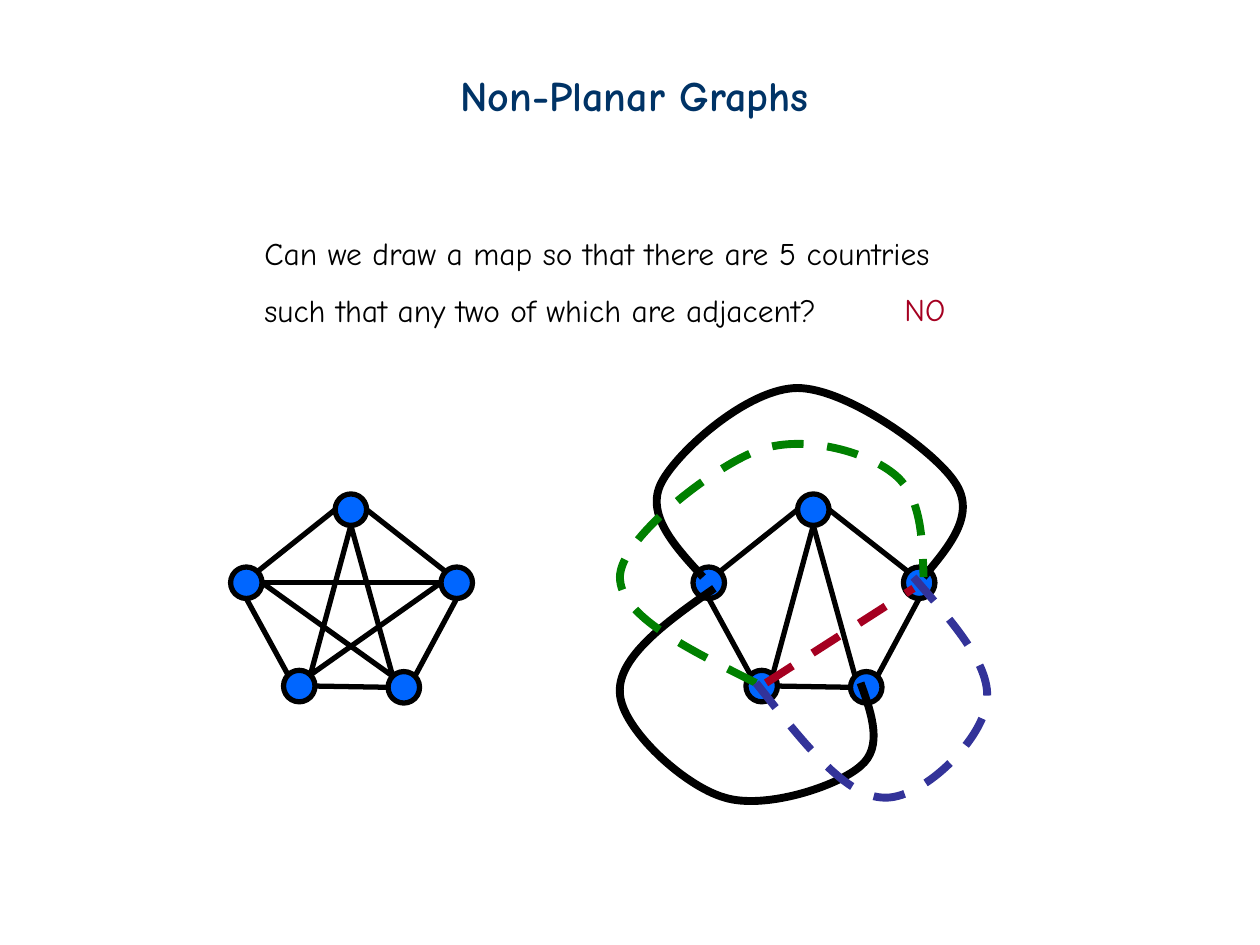
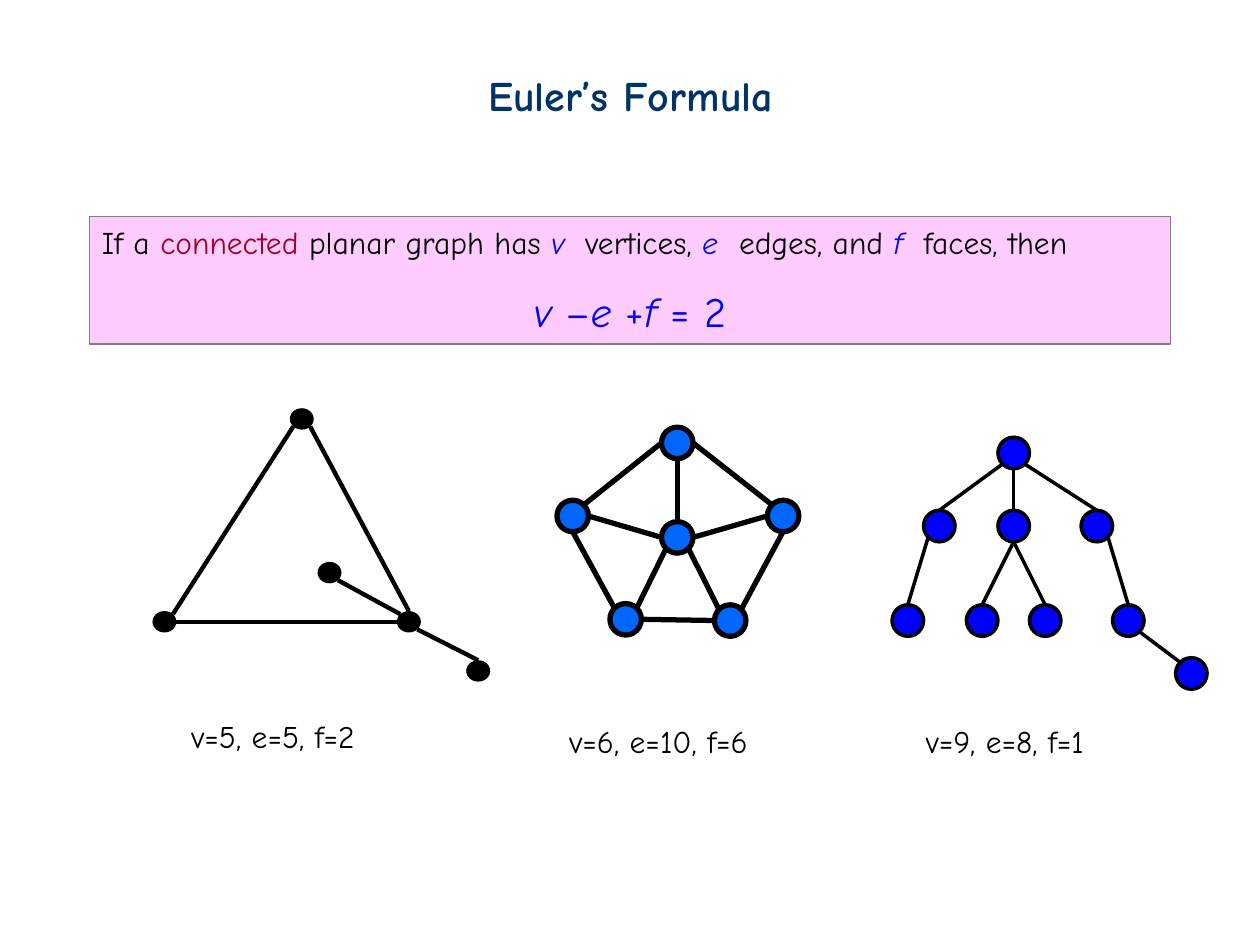
import math

import lxml.etree
import pptx
import pptx.dml.color
import pptx.enum.dml
import pptx.enum.shapes
import pptx.enum.text
import pptx.oxml.ns
import pptx.util

Inches = pptx.util.Inches
Pt = pptx.util.Pt
RGBColor = pptx.dml.color.RGBColor
qn = pptx.oxml.ns.qn
ALIGN = pptx.enum.text.PP_ALIGN
SHAPE = pptx.enum.shapes.MSO_SHAPE

FONT = "Comic Neue"
NAVY = RGBColor(0x00, 0x33, 0x66)
BLACK = RGBColor(0x00, 0x00, 0x00)
GREY = RGBColor(0x80, 0x80, 0x80)
PINK = RGBColor(0xFF, 0xCC, 0xFF)
CRIMSON = RGBColor(0xA5, 0x00, 0x21)
GREEN = RGBColor(0x00, 0x80, 0x00)
INDIGO = RGBColor(0x33, 0x33, 0x99)
AZURE = RGBColor(0x00, 0x66, 0xFF)
BLUE = RGBColor(0x00, 0x00, 0xFF)

DIAGONAL = math.sqrt(0.5)
COMPASS = {
    "N": (0, -1), "E": (1, 0), "S": (0, 1), "W": (-1, 0),
    "NE": (DIAGONAL, -DIAGONAL), "SE": (DIAGONAL, DIAGONAL),
    "SW": (-DIAGONAL, DIAGONAL), "NW": (-DIAGONAL, -DIAGONAL),
}

NON_PLANAR_TITLE = ("Non-Planar Graphs", 3.41, 3.25)
QUESTION = [
    (ALIGN.LEFT, 1, 18, [("Can we draw a map so that there are 5 countries", BLACK, False)]),
    (ALIGN.LEFT, 1.5, 18, [("such that any two of which are adjacent?", BLACK, False)]),
]
ANSWER = [(ALIGN.LEFT, 1, 18, [("NO", CRIMSON, False)])]

EULER_TITLE = ("Euler’s Formula", 3.68, 2.65)
THEOREM = [
    (ALIGN.LEFT, 1, 18, [
        ("If a ", BLACK, False), ("connected", CRIMSON, False),
        (" planar graph has ", BLACK, False), ("v  ", BLUE, True),
        ("vertices, ", BLACK, False), ("e  ", BLUE, True),
        ("edges, and ", BLACK, False), ("f  ", BLUE, True),
        ("faces, then", BLACK, False)]),
    (ALIGN.CENTER, 1.5, 24, [
        ("v ", BLUE, True), ("–", BLUE, False), ("e ", BLUE, True),
        ("+", BLUE, False), ("f", BLUE, True), (" = 2", BLUE, False)]),
]
COUNTS = [
    ("v=5, e=5, f=2", 1.42, 5.64, 1.71),
    ("v=6, e=10, f=6", 4.42, 5.68, 1.83),
    ("v=9, e=8, f=1", 7.25, 5.68, 1.67),
]

PENTAGON = {"top": (0.83, 0), "left": (0, 0.58), "right": (1.67, 0.58),
            "foot_left": (0.42, 1.4), "foot_right": (1.25, 1.41)}
RIM = [
    ("foot_left", "E", "foot_right", "W"), ("top", "E", "right", "NW"),
    ("right", "S", "foot_right", "NE"), ("top", "W", "left", "NE"),
    ("left", "S", "foot_left", "NW"),
]
SPIKES = [("top", "S", "foot_right", "NW"), ("top", "S", "foot_left", "NE")]
CROSSINGS = [
    ("left", "E", "right", "W"), ("foot_right", "NW", "left", "E"),
    ("foot_left", "NE", "right", "W"),
]
HUB = {"hub": (0.83, 0.75)}
SPOKES = [
    ("top", "S", "hub", "N"), ("hub", "E", "right", "W"),
    ("hub", "SE", "foot_right", "NW"), ("hub", "SW", "foot_left", "NE"),
    ("hub", "W", "left", "E"),
]
TRIANGLE = {"top": (2.3, 3.24), "inner": (2.52, 4.46), "left": (1.21, 4.85),
            "right": (3.15, 4.85), "tail": (3.7, 5.24)}
TRIANGLE_EDGES = [
    ("left", "NE", "top", "SW"), ("right", "N", "top", "SE"),
    ("tail", "N", "right", "SE"), ("right", "NW", "inner", "SE"),
    ("left", "E", "right", "W"),
]
TREE = {
    "root": (7.92, 3.47), "left": (7.33, 4.05), "middle": (7.92, 4.05),
    "right": (8.58, 4.05), "left_leaf": (7.08, 4.8), "middle_leaf_1": (7.67, 4.8),
    "middle_leaf_2": (8.17, 4.8), "right_child": (8.83, 4.8), "last_leaf": (9.33, 5.22),
}
TREE_EDGES = [
    ("root", "S", "middle", "N"), ("root", "SW", "left", "N"),
    ("root", "SE", "right", "N"), ("middle", "S", "middle_leaf_1", "N"),
    ("middle", "S", "middle_leaf_2", "N"), ("left", "SW", "left_leaf", "N"),
    ("right", "SE", "right_child", "N"), ("right_child", "SE", "last_leaf", "NW"),
]

DETOURS = [
    (BLACK, False, [
        (5.58, 4.58), (5.35, 4.33), (5.12, 4.08), (5.25, 3.83), (5.38, 3.58),
        (5.94, 3.08), (6.33, 3.08), (6.72, 3.08), (7.42, 3.58), (7.58, 3.83),
        (7.75, 4.08), (7.54, 4.33), (7.33, 4.58)]),
    (BLACK, False, [
        (5.67, 4.67), (5.28, 4.94), (4.9, 5.22), (4.92, 5.5), (4.93, 5.78),
        (5.43, 6.24), (5.75, 6.33), (6.07, 6.43), (6.65, 6.24), (6.83, 6.08),
        (7.01, 5.93), (6.92, 5.67), (6.83, 5.42)]),
    (CRIMSON, True, [(6.08, 5.42), (7.25, 4.67)]),
    (GREEN, True, [
        (6, 5.42), (5.46, 5.15), (4.92, 4.89), (4.92, 4.58), (4.92, 4.28),
        (5.64, 3.72), (6, 3.58), (6.36, 3.44), (6.86, 3.58), (7.08, 3.75),
        (7.31, 3.92), (7.32, 4.25), (7.33, 4.58)]),
    (INDIGO, True, [
        (6, 5.42), (6.35, 5.86), (6.69, 6.31), (7, 6.33), (7.31, 6.36),
        (7.79, 5.88), (7.83, 5.58), (7.88, 5.29), (7.56, 4.94), (7.25, 4.58)]),
]


def style_line(line, color, width, dashed=False):
    line.color.rgb = color
    line.width = Pt(width)
    if dashed:
        line.dash_style = pptx.enum.dml.MSO_LINE.DASH


def write(frame, paragraphs, bold=False):
    for index, (align, spacing, size, runs) in enumerate(paragraphs):
        paragraph = frame.add_paragraph() if index else frame.paragraphs[0]
        paragraph.alignment = align
        paragraph.line_spacing = spacing
        for text, color, italic in runs:
            run = paragraph.add_run()
            run.text = text
            run.font.name = FONT
            run.font.size = Pt(size)
            run.font.bold = bold
            run.font.italic = italic
            run.font.color.rgb = color


def fit_to_text(frame):
    frame.word_wrap = False
    frame.auto_size = pptx.enum.text.MSO_AUTO_SIZE.SHAPE_TO_FIT_TEXT


def add_titled_slide(deck, wording, left, width):
    slide = deck.slides.add_slide(deck.slide_layouts[5])
    title = slide.shapes.title
    title.left, title.top = Inches(left), Inches(0.5)
    title.width, title.height = Inches(width), Inches(0.5)
    write(title.text_frame, [(ALIGN.CENTER, 1, 24, [(wording, NAVY, False)])], bold=True)
    fit_to_text(title.text_frame)
    return slide


def add_note(slide, box, paragraphs):
    frame = slide.shapes.add_textbox(*map(Inches, box)).text_frame
    write(frame, paragraphs)
    fit_to_text(frame)


def add_edge(shapes, start, end, color, width, dashed=False):
    edge = shapes.add_connector(
        pptx.enum.shapes.MSO_CONNECTOR.STRAIGHT, *map(Inches, (*start, *end)))
    style_line(edge.line, color, width, dashed)
    lxml.etree.SubElement(edge.element.spPr, qn("a:effectLst"))


def add_curve(shapes, points, color, width, dashed):
    start, *rest = [(Inches(x), Inches(y)) for x, y in points]
    builder = shapes.build_freeform(*start)
    builder.add_line_segments(rest, close=False)
    curve = builder.convert_to_shape()
    curve.shadow.inherit = False
    curve.fill.background()
    style_line(curve.line, color, width, dashed)
    outline = next(curve.element.iter(qn("a:path")))
    segments = outline.findall(qn("a:lnTo"))
    for first in range(0, len(segments), 3):
        bezier = lxml.etree.SubElement(outline, qn("a:cubicBezTo"))
        for segment in segments[first:first + 3]:
            bezier.append(segment[0])
            outline.remove(segment)


def add_graph(slide, vertices, edges, fill, width, origin=(0, 0), size=(0.25, 0.25), outlined=True):
    shapes = slide.shapes.add_group_shape().shapes

    def site(name, direction):
        return [o + v + s / 2 * (1 + c) for o, v, s, c in
                zip(origin, vertices[name], size, COMPASS[direction])]

    for x, y in vertices.values():
        vertex = shapes.add_shape(
            SHAPE.OVAL, *map(Inches, (origin[0] + x, origin[1] + y, *size)))
        vertex.shadow.inherit = False
        vertex.fill.solid()
        vertex.fill.fore_color.rgb = fill
        if outlined:
            style_line(vertex.line, BLACK, width)
        else:
            vertex.line.fill.background()
    for start, start_side, end, end_side in edges:
        add_edge(shapes, site(start, start_side), site(end, end_side), BLACK, width)


def build_non_planar(deck):
    slide = add_titled_slide(deck, *NON_PLANAR_TITLE)
    add_graph(slide, PENTAGON, RIM + SPIKES + CROSSINGS, AZURE, 3, (1.83, 3.92))
    add_note(slide, (2, 1.81, 5.94, 0.85), QUESTION)
    add_note(slide, (7.08, 2.25, 0.6, 0.4), ANSWER)
    add_graph(slide, PENTAGON, RIM + SPIKES, AZURE, 3, (5.5, 3.92))
    for color, dashed, points in DETOURS:
        if len(points) == 2:
            add_edge(slide.shapes, *points, color, 4.5, dashed)
        else:
            add_curve(slide.shapes, points, color, 4.5, dashed)


def build_euler(deck):
    slide = add_titled_slide(deck, *EULER_TITLE)
    theorem = slide.shapes.add_shape(SHAPE.RECTANGLE, *map(Inches, (0.71, 1.72, 8.58, 1.01)))
    theorem.shadow.inherit = False
    theorem.fill.solid()
    theorem.fill.fore_color.rgb = PINK
    style_line(theorem.line, GREY, 0.75)
    theorem.text_frame.word_wrap = True
    theorem.text_frame.vertical_anchor = pptx.enum.text.MSO_ANCHOR.TOP
    write(theorem.text_frame, THEOREM)
    add_graph(slide, TRIANGLE, TRIANGLE_EDGES, BLACK, 2.5, size=(0.19, 0.17), outlined=False)
    add_graph(slide, PENTAGON | HUB, RIM + SPOKES, AZURE, 3, (4.42, 3.39))
    add_graph(slide, TREE, TREE_EDGES, BLUE, 2)
    for count, left, top, width in COUNTS:
        add_note(slide, (left, top, width, 0.4), [(ALIGN.LEFT, 1, 18, [(count, BLACK, False)])])


def main():
    deck = pptx.Presentation()
    deck.slide_width, deck.slide_height = Inches(10), Inches(7.5)
    build_non_planar(deck)
    build_euler(deck)
    deck.save("out.pptx")


if __name__ == "__main__":
    main()
